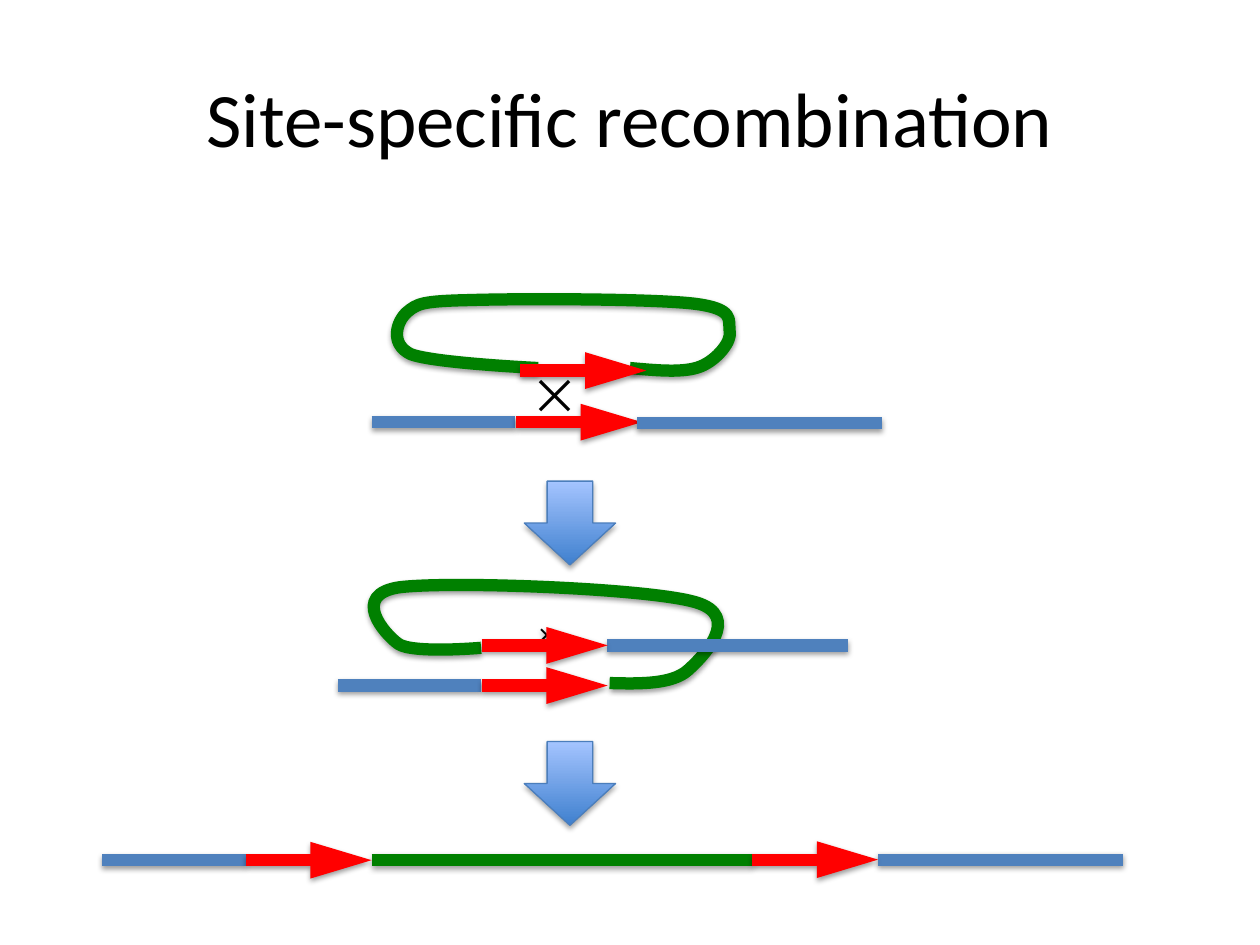
from lxml.etree import SubElement
from pptx import Presentation
from pptx.dml.color import RGBColor as RGB
from pptx.enum.shapes import MSO_CONNECTOR as CONN, MSO_SHAPE as SHAPE
from pptx.enum.text import MSO_ANCHOR as ANCHOR, PP_ALIGN as ALIGN
from pptx.oxml.ns import qn
from pptx.util import Cm, Pt

COLORS = {
    "host": "4F81BD", "site": "FF0000", "insert": "008000", "text": "000000",
    "step_dark": "3F80CE", "step_light": "A4C4FF", "step_edge": "4B7EBC",
}
STRAND_PT = 7
SITE_LEN = 2.54
STEP_X, STEP_W, STEP_H = 10.57, 1.84, 1.69

CIRCLE = [
    (12.7, 7.42),
    (13.26, 7.47), (13.79, 7.52), (14.12, 7.39),
    (14.45, 7.26), (14.76, 6.88), (14.71, 6.68),
    (14.68, 6.45), (14.83, 6.22), (13.97, 6.12),
    (13.08, 6.02), (10.41, 6.02), (9.47, 6.05),
    (8.51, 6.07), (8.41, 6.12), (8.2, 6.3),
    (8, 6.48), (7.85, 6.93), (8.28, 7.14),
    (8.74, 7.32), (10.85, 7.42), (10.85, 7.42),
]
OPENED = [
    (12.29, 13.77),
    (12.93, 13.79), (13.56, 13.79), (13.87, 13.51),
    (14.15, 13.26), (14.99, 12.42), (14.02, 12.14),
    (13.06, 11.86), (9.07, 11.71), (8.05, 11.84),
    (7.06, 11.99), (7.75, 12.78), (8.03, 12.98),
    (8.31, 13.18), (9.7, 13.06), (9.7, 13.06),
]
PARTS = [
    ("host", 7.49, 10.39, 8.51),
    ("site", 10.4, 8.51),
    ("host", 12.85, 17.78, 8.53),
    ("loop", CIRCLE, ""),
    ("site", 10.49, 7.47),
    ("host", 2.06, 4.95, 17.34),
    ("insert", 7.49, 15.16, 17.34),
    ("host", 17.7, 22.63, 17.33),
    ("site", 15.16, 17.33),
    ("site", 4.95, 17.34),
    ("step", 14.95),
    ("step", 9.7),
    ("host", 6.81, 9.7, 13.82),
    ("site", 9.71, 13.82),
    ("loop", OPENED, "×"),
    ("host", 12.24, 17.09, 13.01),
    ("site", 9.71, 13.01),
]


def color(name):
    return RGB.from_string(COLORS[name])


def add_text(tf, text, size, font="Calibri", align=ALIGN.CENTER, anchor=ANCHOR.MIDDLE):
    tf.word_wrap = True
    tf.vertical_anchor = anchor
    p = tf.paragraphs[0]
    p.alignment = align
    r = p.add_run()
    r.text = text
    r.font.name, r.font.size = font, Pt(size)
    r.font.color.rgb = color("text")


def add_shadow(sp, alpha, dist):
    pr = sp._element.spPr
    effects = pr.find(qn("a:effectLst"))
    if effects is None:
        effects = SubElement(pr, qn("a:effectLst"))
    shadow = SubElement(effects, qn("a:outerShdw"), blurRad=str(Pt(3.1)),
                        dist=str(Pt(dist)), dir="5400000", rotWithShape="0")
    clr = SubElement(shadow, qn("a:srgbClr"), val="000000")
    SubElement(clr, qn("a:alpha"), val=str(alpha * 1000))


def set_line(sp, name, width=STRAND_PT):
    sp.line.color.rgb = color(name)
    sp.line.width = Pt(width)


def add_strand(shapes, name, x1, x2, y):
    s = shapes.add_connector(CONN.STRAIGHT, Cm(x1), Cm(y), Cm(x2), Cm(y))
    set_line(s, name)
    if name == "site":
        SubElement(s.line._get_or_add_ln(), qn("a:tailEnd"), type="triangle", len="lg")
    add_shadow(s, 38, 1.6)


def add_loop(shapes, points, label):
    pts = [(Cm(x), Cm(y)) for x, y in points]
    builder = shapes.build_freeform(*pts[0])
    builder.add_line_segments(pts[1:], close=False)
    sp = builder.convert_to_shape()
    path = next(sp._element.iter(qn("a:path")))
    lines = path.findall(qn("a:lnTo"))
    for i in range(0, len(lines), 3):
        curve = SubElement(path, qn("a:cubicBezTo"))
        for ln in lines[i:i + 3]:
            curve.append(ln[0])
            path.remove(ln)
    sp.shadow.inherit = False
    sp.fill.background()
    set_line(sp, "insert")
    add_shadow(sp, 38, 1.6)
    if label:
        add_text(sp.text_frame, label, 18)


def add_step(shapes, y):
    sp = shapes.add_shape(SHAPE.DOWN_ARROW, Cm(STEP_X), Cm(y), Cm(STEP_W), Cm(STEP_H))
    sp.shadow.inherit = False
    sp.fill.gradient()
    sp.fill.gradient_angle = 90
    for stop, pos, name in zip(sp.fill.gradient_stops, (0, 1), ("step_dark", "step_light")):
        stop.position = pos
        stop.color.rgb = color(name)
    set_line(sp, "step_edge", 0.75)
    add_shadow(sp, 35, 1.8)


def main():
    """Build the site-specific recombination slide."""
    prs = Presentation()
    prs.slide_width, prs.slide_height = Cm(25.4), Cm(19.05)
    shapes = prs.slides.add_slide(prs.slide_layouts[6]).shapes

    title = shapes.add_textbox(Cm(1.27), Cm(0.76), Cm(22.86), Cm(3.18))
    add_text(title.text_frame, "Site-specific recombination", 44)

    for kind, *args in PARTS:
        if kind == "loop":
            add_loop(shapes, *args)
        elif kind == "step":
            add_step(shapes, *args)
        elif kind == "site":
            x, y = args
            add_strand(shapes, kind, x, x + SITE_LEN, y)
        else:
            add_strand(shapes, kind, *args)

    cross = shapes.add_textbox(Cm(10.44), Cm(7.24), Cm(1.73), Cm(1.45))
    add_text(cross.text_frame, "×", 28, font="Noto Sans CJK JP",
             align=ALIGN.LEFT, anchor=ANCHOR.TOP)

    prs.save("out.pptx")


if __name__ == "__main__":
    main()
